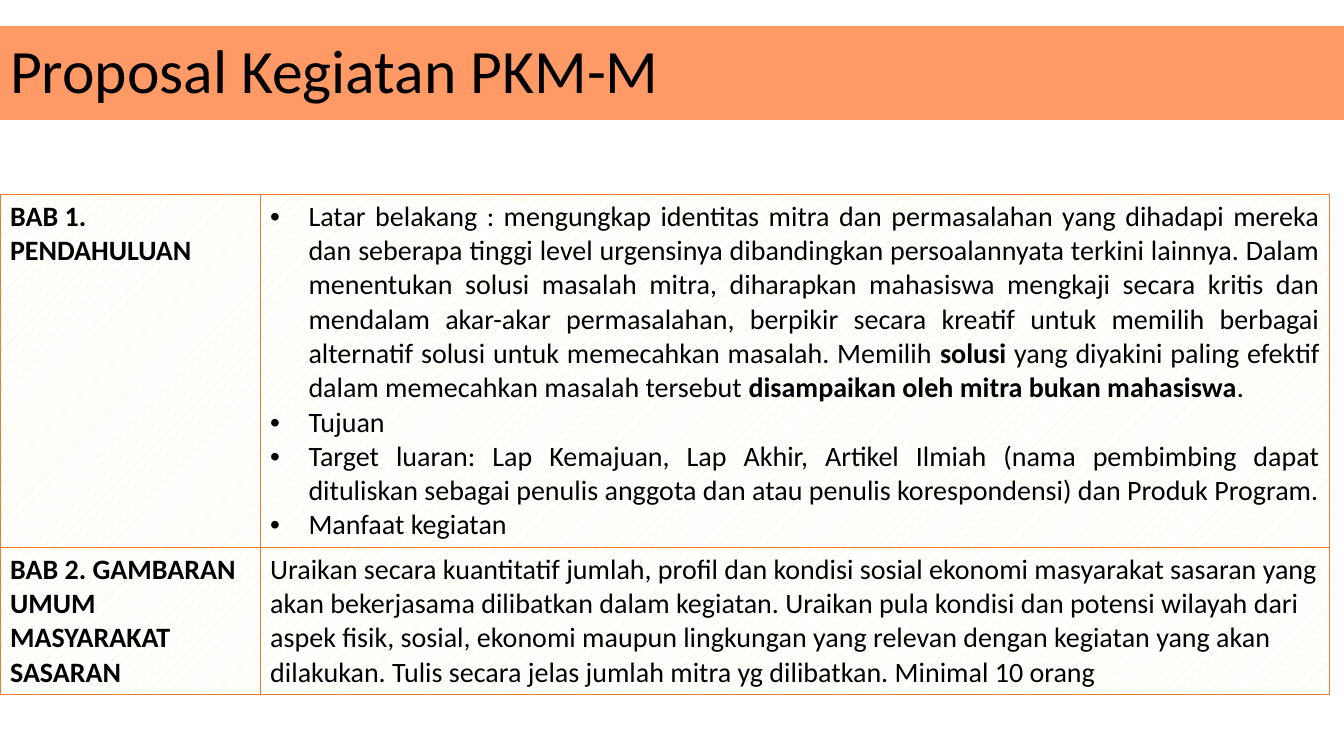
from dataclasses import dataclass

from lxml.etree import SubElement
from pptx import Presentation
from pptx.dml.color import RGBColor as RGB
from pptx.enum.dml import MSO_PATTERN as Pattern
from pptx.enum.text import MSO_ANCHOR as Anchor, MSO_AUTO_SIZE as Fit, PP_ALIGN as Align
from pptx.oxml import parse_xml
from pptx.oxml.ns import nsdecls, qn
from pptx.util import Inches, Pt

# Content: a cell is a list of paragraphs, ** marks bold words
TITLE = "Proposal Kegiatan PKM-M"
ROWS = [
    (["**BAB 1. PENDAHULUAN**"],
     ["Latar belakang : mengungkap identitas mitra dan permasalahan yang dihadapi "
      "mereka dan seberapa tinggi level urgensinya dibandingkan persoalannyata "
      "terkini lainnya. Dalam menentukan solusi masalah mitra, diharapkan mahasiswa "
      "mengkaji secara kritis dan mendalam akar-akar permasalahan, berpikir secara "
      "kreatif untuk memilih berbagai alternatif solusi untuk memecahkan masalah. "
      "Memilih **solusi** yang diyakini paling efektif dalam memecahkan masalah "
      "tersebut **disampaikan oleh mitra bukan mahasiswa**.",
      "Tujuan",
      "Target luaran: Lap Kemajuan, Lap Akhir, Artikel Ilmiah (nama pembimbing dapat "
      "dituliskan sebagai penulis anggota dan atau penulis korespondensi) dan Produk "
      "Program.",
      "Manfaat kegiatan"]),
    (["**BAB 2. GAMBARAN UMUM MASYARAKAT SASARAN**"],
     ["Uraikan secara kuantitatif jumlah, profil dan kondisi sosial ekonomi masyarakat "
      "sasaran yang akan bekerjasama dilibatkan dalam kegiatan. Uraikan pula kondisi "
      "dan potensi wilayah dari aspek fisik, sosial, ekonomi maupun lingkungan yang "
      "relevan dengan kegiatan yang akan dilakukan. Tulis secara jelas jumlah mitra yg "
      "dilibatkan. Minimal 10 orang"]),
]
WIDE, HIGH = 13.33, 7.5
COLS, DEEP = (2.58, 10.61), (3.5, 1.46)
BAND = (0, 0.26, WIDE, 0.93)
TOP = 1.93


@dataclass(frozen=True)
class Theme:
    font: str = "Calibri"
    head: int = 44
    body: int = 20
    ink: str = "000000"
    band: str = "FF9966"
    dots: str = "FFE699"
    back: str = "FFFFFF"
    rule: str = "ED7D31"
    hang: float = 0.38


LOOK = Theme()


def write(frame, items, size=LOOK.body, align=Align.LEFT, bullet=False, space=1.0):
    for n, item in enumerate(items):
        para = frame.paragraphs[0] if n == 0 else frame.add_paragraph()
        para.alignment, para.line_spacing = align, space
        if bullet:
            props = para._p.get_or_add_pPr()
            props.set("marL", str(Inches(LOOK.hang)))
            props.set("indent", str(-Inches(LOOK.hang)))
            SubElement(props, qn("a:buFont")).set("typeface", "Arial")
            SubElement(props, qn("a:buChar")).set("char", "•")
        for k, part in enumerate(item.split("**")):
            if part:
                run = para.add_run()
                run.text = part
                font = run.font
                font.name, font.size, font.bold = LOOK.font, Pt(size), k % 2 == 1
                font.color.rgb = RGB.from_string(LOOK.ink)


def dress(cell):
    """Give a cell its dotted fill and four borders."""
    fill = cell.fill
    fill.patterned()
    fill.pattern = Pattern.PERCENT_10
    fill.fore_color.rgb = RGB.from_string(LOOK.dots)
    fill.back_color.rgb = RGB.from_string(LOOK.back)
    props = cell._tc.get_or_add_tcPr()
    for n, side in enumerate("LRTB"):
        props.insert(n, parse_xml(
            f'<a:ln{side} {nsdecls("a")} w="{Pt(1)}"><a:solidFill>'
            f'<a:srgbClr val="{LOOK.rule}"/></a:solidFill></a:ln{side}>'))


def main():
    deck = Presentation()
    deck.slide_width, deck.slide_height = Inches(WIDE), Inches(HIGH)
    slide = deck.slides.add_slide(deck.slide_layouts[5])

    # Title band
    title = slide.shapes.title
    title.left, title.top, title.width, title.height = map(Inches, BAND)
    title.fill.solid()
    title.fill.fore_color.rgb = RGB.from_string(LOOK.band)
    frame = title.text_frame
    frame.auto_size, frame.word_wrap = Fit.NONE, True
    frame.vertical_anchor = Anchor.MIDDLE
    write(frame, [TITLE], size=LOOK.head, space=0.9)

    # Chapter table
    grid = slide.shapes.add_table(len(DEEP), len(COLS), 0, Inches(TOP),
                                  Inches(sum(COLS)), Inches(sum(DEEP))).table
    grid.first_row = grid.horz_banding = False
    for col, width in zip(grid.columns, COLS):
        col.width = Inches(width)
    for row, height, texts in zip(grid.rows, DEEP, ROWS):
        row.height = Inches(height)
        for cell, items in zip(row.cells, texts):
            many = len(items) > 1
            write(cell.text_frame, items, bullet=many,
                  align=Align.JUSTIFY if many else Align.LEFT)
            dress(cell)

    deck.save("out.pptx")


if __name__ == "__main__":
    main()
